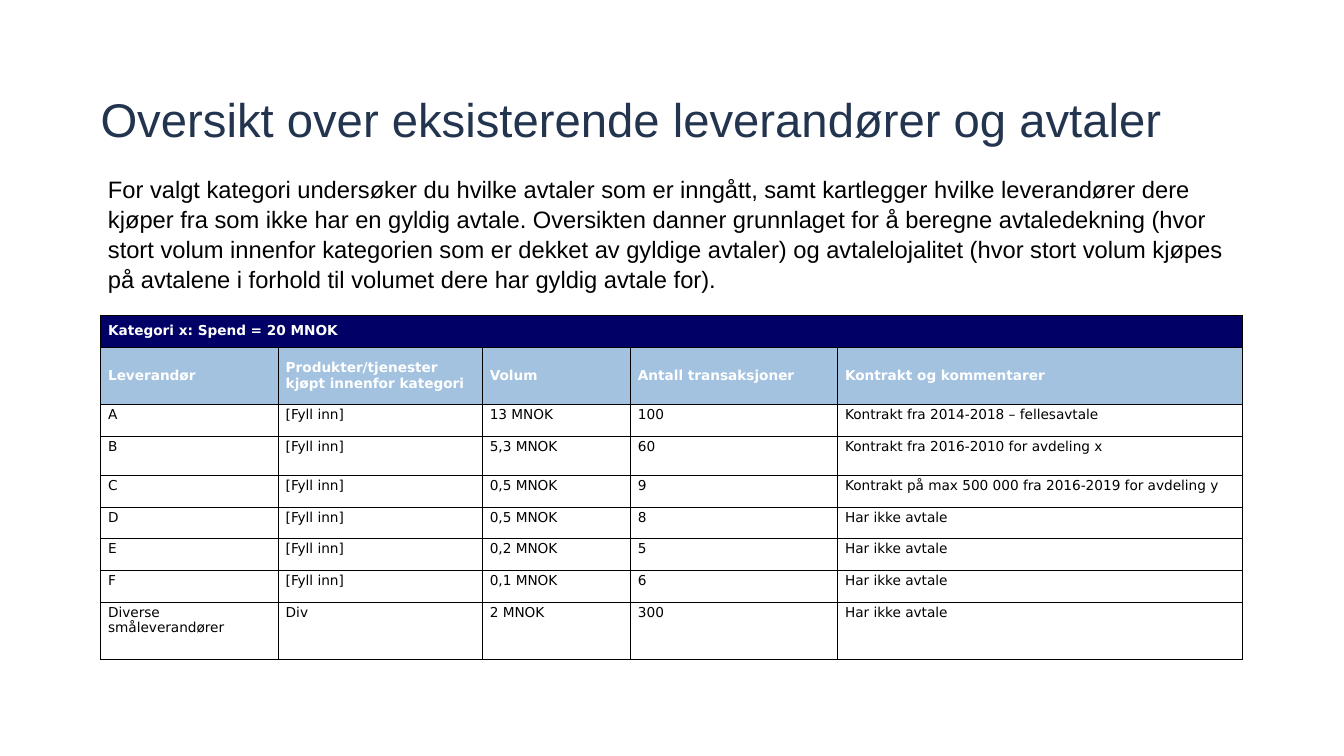
from pptx import Presentation, util as u
from pptx.dml.color import RGBColor
from pptx.enum import text
from pptx.oxml import parse_xml
from pptx.oxml.ns import nsdecls

HUES = {"title": "23344F", "ink": "000000", "paper": "FFFFFF", "top": "000066", "head": "A3C2E0"}
LEFT, WIDE = u.Inches(1.33), u.Inches(15.11)


def style(par, size, face, hue, bold=False):
    for run in par.runs:
        run.font.size = u.Pt(size)
        run.font.name = face
        run.font.bold = bold
        run.font.color.rgb = RGBColor.from_string(HUES[hue])


def edge(cell):
    props = cell._tc.get_or_add_tcPr()
    for spot, side in enumerate(("lnL", "lnR", "lnT", "lnB")):
        props.insert(spot, parse_xml(
            f'<a:{side} {nsdecls("a")} w="12700"><a:solidFill>'
            f'<a:srgbClr val="{HUES["ink"]}"/></a:solidFill></a:{side}>'))


deck = Presentation()
deck.slide_width, deck.slide_height = u.Inches(17.78), u.Inches(10)
slide = deck.slides.add_slide(deck.slide_layouts[5])

title = slide.shapes.title
title.left, title.top, title.width, title.height = LEFT, u.Inches(1.11), WIDE, u.Inches(0.84)
frame = title.text_frame
frame.text = "Oversikt over eksisterende leverandører og avtaler"
frame.margin_left = frame.margin_right = frame.margin_top = frame.margin_bottom = 0
frame.vertical_anchor = text.MSO_ANCHOR.BOTTOM
frame.auto_size = text.MSO_AUTO_SIZE.NONE
par = frame.paragraphs[0]
par.alignment = text.PP_ALIGN.LEFT
par.line_spacing = 0.9
style(par, 45, "Arial", "title")

rows = [
    ["Kategori x: Spend = 20 MNOK", "", "", "", ""],
    ["Leverandør", "Produkter/tjenester kjøpt innenfor kategori", "Volum",
     "Antall transaksjoner", "Kontrakt og kommentarer"],
    ["A", "[Fyll inn]", "13 MNOK", "100", "Kontrakt fra 2014-2018 – fellesavtale"],
    ["B", "[Fyll inn]", "5,3 MNOK", "60", "Kontrakt fra 2016-2010 for avdeling x"],
    ["C", "[Fyll inn]", "0,5 MNOK", "9", "Kontrakt på max 500 000 fra 2016-2019 for avdeling y"],
    ["D", "[Fyll inn]", "0,5 MNOK", "8", "Har ikke avtale"],
    ["E", "[Fyll inn]", "0,2 MNOK", "5", "Har ikke avtale"],
    ["F", "[Fyll inn]", "0,1 MNOK", "6", "Har ikke avtale"],
    ["Diverse småleverandører", "Div", "2 MNOK", "300", "Har ikke avtale"],
]
widths = [2.35, 2.7, 1.96, 2.74, 5.36]
heights = [0.42, 0.76, 0.42, 0.52, 0.42, 0.42, 0.42, 0.42, 0.76]

table = slide.shapes.add_table(len(rows), len(widths), LEFT, u.Inches(4.17),
                               WIDE, u.Inches(sum(heights))).table
for col, width in zip(table.columns, widths):
    col.width = u.Inches(width)
for row, height in zip(table.rows, heights):
    row.height = u.Inches(height)
table.cell(0, 0).merge(table.cell(0, 4))

for r, row in enumerate(rows):
    head = r < 2
    fill = ("top", "head")[r] if head else "paper"
    for c, word in enumerate(row):
        cell = table.cell(r, c)
        cell.text_frame.text = word
        cell.margin_left = cell.margin_right = u.Inches(0.1)
        cell.margin_top = cell.margin_bottom = u.Inches(0.03)
        cell.vertical_anchor = text.MSO_ANCHOR.MIDDLE if head else text.MSO_ANCHOR.TOP
        cell.fill.solid()
        cell.fill.fore_color.rgb = RGBColor.from_string(HUES[fill])
        edge(cell)
        style(cell.text_frame.paragraphs[0], 13, "DejaVu Sans", "paper" if head else "ink", head)

frame = slide.shapes.add_textbox(LEFT, u.Inches(2.25), WIDE, u.Inches(1.63)).text_frame
frame.word_wrap = True
frame.text = (
    "For valgt kategori undersøker du hvilke avtaler som er inngått, samt kartlegger hvilke "
    "leverandører dere kjøper fra som ikke har en gyldig avtale. Oversikten danner grunnlaget "
    "for å beregne avtaledekning (hvor stort volum innenfor kategorien som er dekket av gyldige "
    "avtaler) og avtalelojalitet (hvor stort volum kjøpes på avtalene i forhold til volumet dere "
    "har gyldig avtale for).")
par = frame.paragraphs[0]
par.line_spacing = 1.05
style(par, 22.6, "Arial", "ink")

deck.save("out.pptx")
